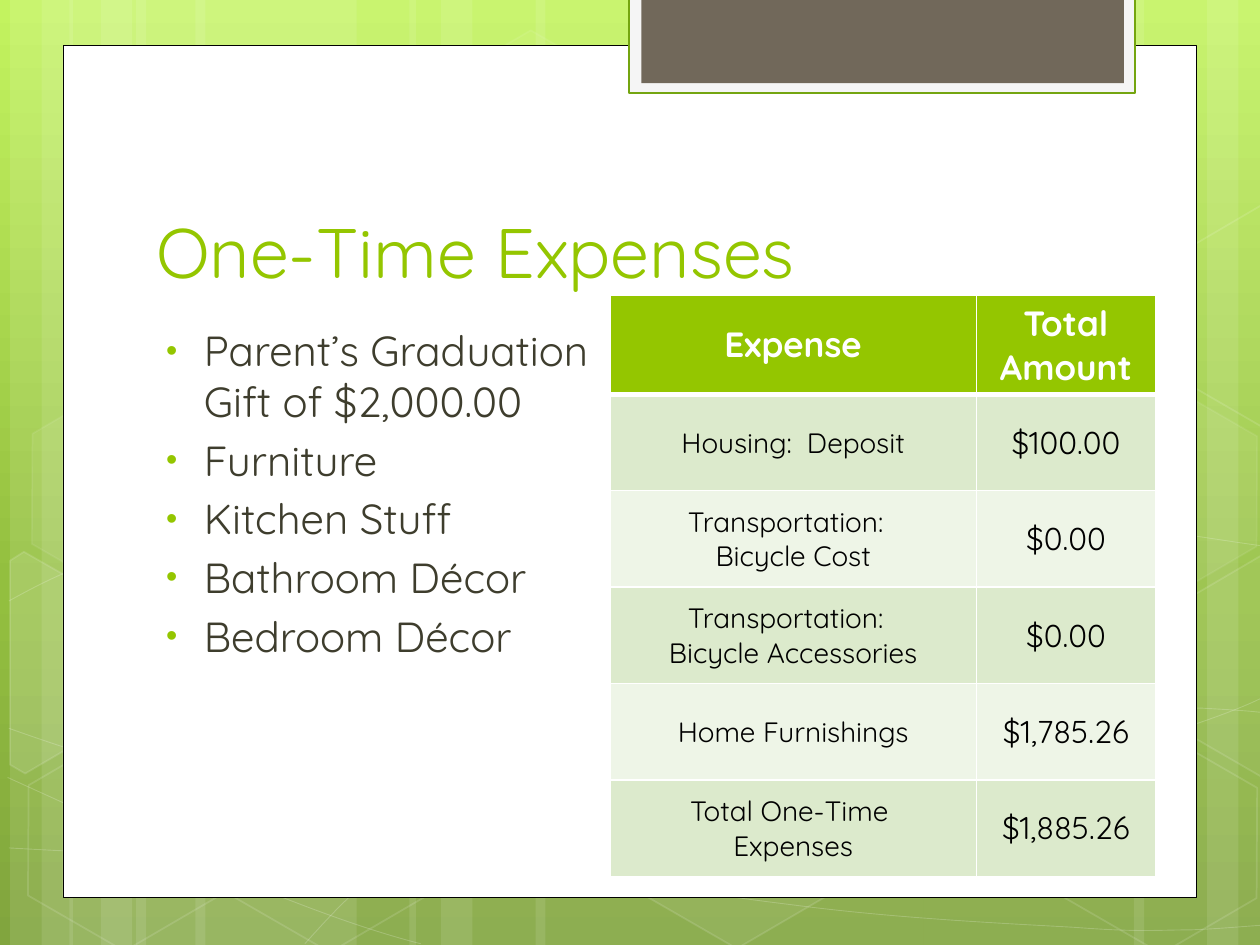
import copy
import pptx
import pptx.dml.color
import pptx.enum.shapes
import pptx.enum.text
import pptx.oxml
import pptx.oxml.ns
import pptx.util

Inches = pptx.util.Inches
Pt = pptx.util.Pt
qn = pptx.oxml.ns.qn
SHAPE = pptx.enum.shapes.MSO_SHAPE
ALIGN = pptx.enum.text.PP_ALIGN
ANCHOR = pptx.enum.text.MSO_ANCHOR
FONT, GREEN, WHITE = "Quicksand", "94C600", "FFFFFF"

BANDS = [(1.08, 1.75), (0.08, 0.5), (0.33, 0.83), (1.55, 1.75), (0.55, 0.5), (0.8, 0.83),
         (7.33, 1.75), (9.58, 0.5), (9, 0.83), (4.25, 3.08), (3.25, 0.5), (3.5, 0.83)]
CURVES = [
    [(0.07, 6.73), (0.61, 6.76), (1.15, 6.79), (1.9, 6.78), (2.65, 6.77), (3.58, 6.75),
     (4.58, 6.65), (5.58, 6.55), (7, 6.36), (7.92, 6.17), (8.83, 5.98), (9.77, 5.68), (10.07, 5.51)],
    [(0.07, 4.77), (0.36, 4.61), (0.65, 4.46), (1.21, 4.31), (1.78, 4.16), (2.59, 3.94),
     (3.47, 3.87), (4.36, 3.8), (5.44, 3.79), (6.54, 3.87), (7.64, 3.95), (9.47, 4.26), (10.07, 4.34)],
    [(0.06, 6.17), (1.27, 6.72), (2.47, 7.27), (3.34, 7.49)],
    [(0.07, 5.78), (0.38, 5.89), (0.7, 6), (1.28, 6.16), (1.86, 6.31), (2.73, 6.56),
     (3.57, 6.73), (4.4, 6.9), (5.45, 7.08), (6.28, 7.18), (7.11, 7.29), (8, 7.33),
     (8.53, 7.36), (9.05, 7.4), (9.19, 7.38), (9.45, 7.38), (9.71, 7.37), (9.89, 7.35), (10.07, 7.34)],
    [(2.42, 7.49), (2.6, 7.29), (2.78, 7.09), (3.02, 6.91), (3.26, 6.73), (3.6, 6.53),
     (3.88, 6.39), (4.16, 6.25), (4.33, 6.19), (4.7, 6.09), (5.06, 5.99), (5.73, 5.85),
     (6.08, 5.78), (6.44, 5.71), (6.49, 5.71), (6.8, 5.69), (7.11, 5.66), (7.6, 5.63),
     (7.94, 5.62), (8.29, 5.61), (8.86, 5.62), (8.86, 5.62), (9.08, 5.62), (9.3, 5.62),
     (9.53, 5.62), (9.71, 5.63), (9.88, 5.64), (9.97, 5.65), (10.06, 5.66), (10.03, 5.65), (10.06, 5.66)],
]
HEXES = [(3.34, 0.36, 4, 8), (4.97, 5.89, 6, 12), (0.11, 5.91, 0, 12), (0.14, 3.12, 7, 8),
         (1.74, 5.92, 0, 12), (8.34, 5.93, 0, 12), (8.34, 3.14, 7, 8)]
CUT_HEXES = [
    ([(0.08, 4.45), (0.19, 4.38), (0.96, 4.82), (0.95, 5.7), (0.2, 6.14), (0.08, 6.07)], 10),
    ([(9.26, 4.85), (10.01, 4.41), (10.09, 4.46), (10.09, 6.13), (10.02, 6.17), (9.26, 5.73)], 4),
    ([(9.26, 2.07), (10.01, 1.63), (10.1, 1.68), (10.09, 3.35), (10.02, 3.39), (9.26, 2.95)], 0),
]
ITEMS = ["Parent’s Graduation Gift of $2,000.00", "Furniture", "Kitchen Stuff",
         "Bathroom Décor", "Bedroom Décor"]
ROWS = [
    (["Expense"], "Total Amount"),
    (["Housing:  Deposit"], "$100.00"),
    (["Transportation:  ", "Bicycle Cost"], "$0.00"),
    (["Transportation:  ", "Bicycle Accessories"], "$0.00"),
    (["Home Furnishings"], "$1,785.26"),
    (["Total One-Time ", "Expenses"], "$1,885.26"),
]


def color(code):
    return pptx.dml.color.RGBColor.from_string(code)


def node(host, tag, **attrs):
    item = pptx.oxml.parse_xml(f'<a:{tag} {pptx.oxml.ns.nsdecls("a")}/>')
    for key, value in attrs.items():
        item.set(key, str(value))
    host.append(item)
    return item


def tint(fill, host, code, alpha):
    fill.solid()
    fill.fore_color.rgb = color(code)
    if alpha < 100:
        node(host.find(qn("a:solidFill") + "/" + qn("a:srgbClr")), "alpha", val=alpha * 1000)


def style(shape, fill=None, alpha=100, line=None, width=1, clear=100):
    shape.shadow.inherit = False
    props = shape.element.spPr
    if fill and alpha:
        tint(shape.fill, props, fill, alpha)
    else:
        shape.fill.background()
    if line:
        shape.line.width = Pt(width)
        tint(shape.line.fill, props.find(qn("a:ln")), line, clear)
    else:
        shape.line.fill.background()


def block(slide, kind, box, **look):
    shape = slide.shapes.add_shape(kind, *map(Inches, box))
    style(shape, **look)
    return shape


def outline(slide, points, close, **look):
    spots = [(Inches(x), Inches(y)) for x, y in points]
    maker = slide.shapes.build_freeform(*spots[0], scale=1.0)
    maker.add_line_segments(spots[1:], close=close)
    shape = maker.convert_to_shape()
    style(shape, **look)
    return shape


def bend(shape):
    track = shape.element.find(".//" + qn("a:path"))
    lines = track.findall(qn("a:lnTo"))
    for start in range(0, len(lines), 3):
        curve = node(track, "cubicBezTo")
        for line in lines[start:start + 3]:
            curve.append(line[0])
            track.remove(line)


def write(para, text, size, code, bold=False):
    run = para.add_run()
    run.text = text
    run.font.name, run.font.size, run.font.bold = FONT, Pt(size), bold
    run.font.color.rgb = color(code)


def paras(frame, lines):
    for index, line in enumerate(lines):
        yield (frame.add_paragraph() if index else frame.paragraphs[0]), line


def textbox(slide, box, anchor):
    frame = slide.shapes.add_textbox(*map(Inches, box)).text_frame
    frame.word_wrap = True
    frame.vertical_anchor = anchor
    return frame


def bullets(slide):
    frame = textbox(slide, (1.14, 2.53, 3.74, 3.82), ANCHOR.TOP)
    for para, text in paras(frame, ITEMS):
        para.space_before = Pt(4.8)
        props = para._p.get_or_add_pPr()
        props.set("marL", str(Inches(0.38)))
        props.set("indent", str(Inches(-0.3)))
        node(node(props, "buClr"), "srgbClr", val=GREEN)
        node(props, "buSzPct", val=76000)
        node(props, "buFont", typeface="Arial")
        node(props, "buChar", char="•")
        write(para, text, 24, "3E3D2D")


def border(cell, row):
    props = cell._tc.get_or_add_tcPr()
    widths = {"lnL": 1, "lnR": 1, "lnT": 3 if row == 1 else 1, "lnB": 3 if row == 0 else 1}
    for tag, width in widths.items():
        line = node(props, tag, w=Pt(width))
        node(node(line, "solidFill"), "srgbClr", val=WHITE)


def table(slide):
    grid = slide.shapes.add_table(len(ROWS), 2, *map(Inches, (4.84, 2.34, 4.33, 4.59))).table
    grid.columns[0].width, grid.columns[1].width = Inches(2.91), Inches(1.42)
    grid.rows[0].height = Inches(0.79)
    for row, (label, amount) in enumerate(ROWS):
        for col, lines in enumerate((label, [amount])):
            cell = grid.cell(row, col)
            border(cell, row)
            cell.fill.solid()
            cell.fill.fore_color.rgb = color(("DCEACC" if row % 2 else "EEF5E7") if row else GREEN)
            cell.vertical_anchor = ANCHOR.MIDDLE
            for para, text in paras(cell.text_frame, lines):
                para.alignment = ALIGN.CENTER
                if row:
                    write(para, text, 18 if col else 16, "000000")
                else:
                    write(para, text, 20, WHITE, True)


def backdrop(slide):
    fill = slide.background.fill
    fill.gradient()
    fill.gradient_angle = 270
    stops = slide.element.find(".//" + qn("a:gsLst"))
    stops.append(copy.deepcopy(stops[0]))
    shades = [(0, "C3F35F"), (0.62, "93BF3F"), (1, "81A53E")]
    for stop, (place, code) in zip(fill.gradient_stops, shades):
        stop.position = place
        stop.color.rgb = color(code)
    for left, width in BANDS:
        block(slide, SHAPE.RECTANGLE, (left, 0, width, 7.5), fill=WHITE, alpha=10)
    for knots in CURVES:
        bend(outline(slide, knots, False, line=WHITE, width=0.5, clear=20))
    for left, top, alpha, clear in HEXES:
        shape = block(slide, SHAPE.HEXAGON, (left, top, 1.75, 1.52),
                      fill=WHITE, alpha=alpha, line=WHITE, clear=clear)
        shape.adjustments[0] = 0.285
        shape.rotation = 30
    for points, alpha in CUT_HEXES:
        outline(slide, points, True, fill=WHITE, alpha=alpha, line=WHITE, clear=12)


def main():
    deck = pptx.Presentation()
    deck.slide_width, deck.slide_height = Inches(10), Inches(7.5)
    slide = deck.slides.add_slide(deck.slide_layouts[6])
    backdrop(slide)
    block(slide, SHAPE.RECTANGLE, (0.5, 0.36, 9, 6.76), fill=WHITE, line="000000", width=0.5)
    block(slide, SHAPE.RECTANGLE, (4.99, -0.02, 4.02, 0.76), fill="F5F5F5", line="74A510", width=1.25)
    block(slide, SHAPE.RECTANGLE, (5.09, -0.02, 3.83, 0.68), fill="71685A")
    title = textbox(slide, (1.14, 1.12, 7.68, 1.25), ANCHOR.BOTTOM)
    write(title.paragraphs[0], "One-Time Expenses", 40, GREEN)
    bullets(slide)
    table(slide)
    deck.save("out.pptx")


if __name__ == "__main__":
    main()
